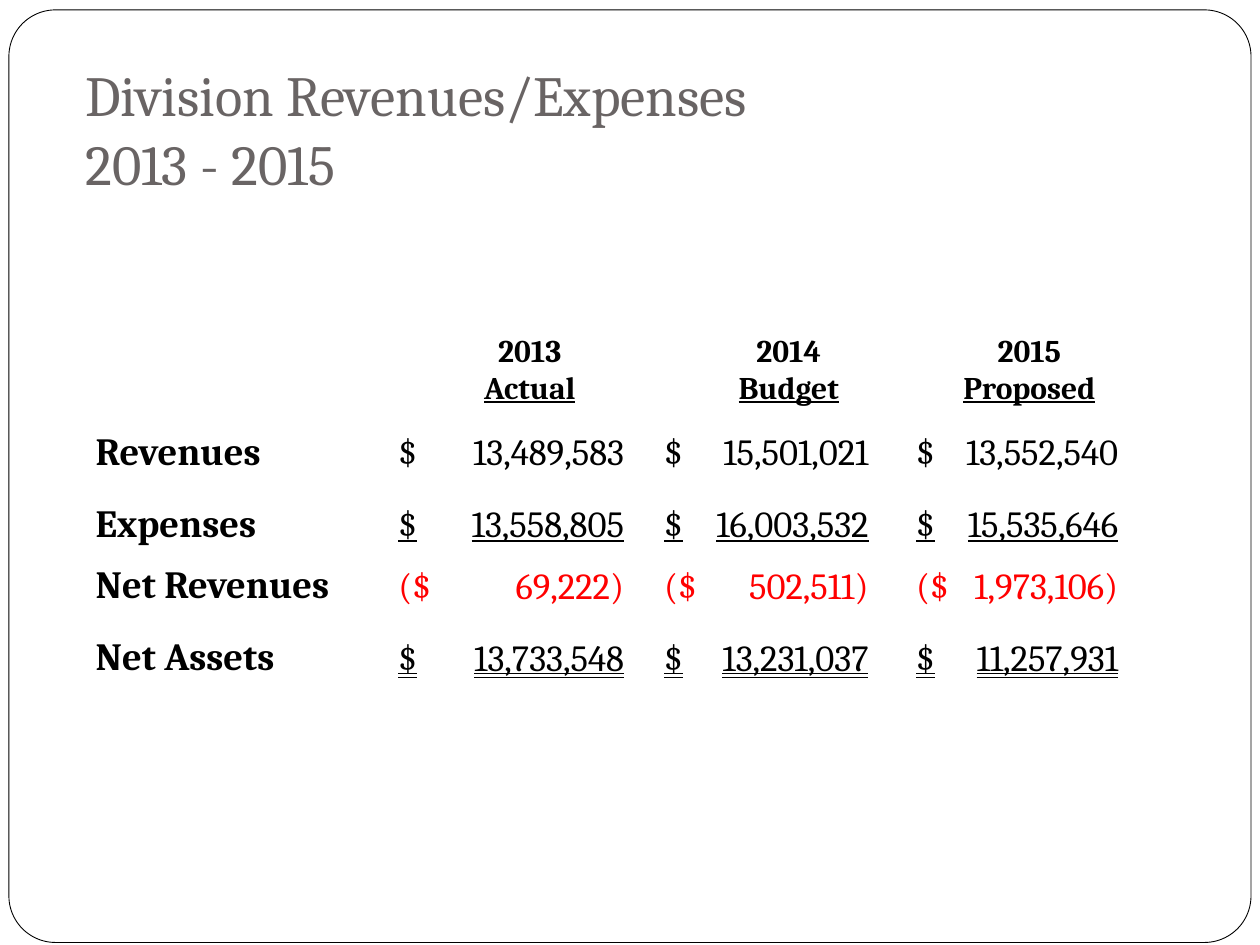
from dataclasses import dataclass

from lxml import etree
from pptx import Presentation
from pptx.dml.color import RGBColor
from pptx.enum.shapes import MSO_SHAPE
from pptx.enum.text import MSO_ANCHOR, MSO_UNDERLINE, PP_ALIGN
from pptx.oxml.ns import qn
from pptx.util import Cm, Pt

BOTTOM = MSO_ANCHOR.BOTTOM
CENTER, LEFT = PP_ALIGN.CENTER, PP_ALIGN.LEFT
SINGLE = MSO_UNDERLINE.SINGLE_LINE
DOUBLE = MSO_UNDERLINE.DOUBLE_LINE


@dataclass(frozen=True)
class Theme:
    font: str = "Cambria"
    paper: RGBColor = RGBColor(0xFF, 0xFF, 0xFF)
    ink: RGBColor = RGBColor(0, 0, 0)
    title: RGBColor = RGBColor(0x69, 0x64, 0x64)
    loss: RGBColor = RGBColor(0xFF, 0, 0)
    title_size: Pt = Pt(32.4)
    head_size: Pt = Pt(18)
    label_size: Pt = Pt(22)
    amount_size: Pt = Pt(21)


theme = Theme()


def style(p, size, color=theme.ink, bold=False, underline=None, align=LEFT):
    p.alignment = align
    p.font.name = theme.font
    p.font.size = size
    p.font.color.rgb = color
    p.font.bold = bold
    p.font.underline = underline


def add_right_tab(p, position):
    """Line up the text after a tab with its right edge at position."""
    tabs = etree.Element(qn("a:tabLst"))
    etree.SubElement(tabs, qn("a:tab"), pos=str(int(position)), algn="r")
    p.font  # the tab list has to precede the default run properties
    p._p.pPr.find(qn("a:defRPr")).addprevious(tabs)


prs = Presentation()
prs.slide_width, prs.slide_height = Cm(25.4), Cm(19.05)
s = prs.slides.add_slide(prs.slide_layouts[6])

# Frame
frame = s.shapes.add_shape(MSO_SHAPE.ROUNDED_RECTANGLE,
                           Cm(0.18), Cm(0.2), Cm(25.04), Cm(18.8))
frame.adjustments[0] = 0.05
frame.shadow.inherit = False
frame.fill.solid()
frame.fill.fore_color.rgb = theme.paper
frame.line.color.rgb = theme.ink
frame.line.width = Pt(0.5)

# Title
title = s.shapes.add_textbox(Cm(1.47), Cm(1.57), Cm(19.91), Cm(2.64))
tf = title.text_frame
tf.word_wrap = True
tf.vertical_anchor = BOTTOM
tf.margin_bottom = Cm(0.25)
p = tf.paragraphs[0]
p.text = "Division Revenues/Expenses\v2013 - 2015"
style(p, theme.title_size, theme.title)

# Table
headings = [("2013", "Actual"), ("2014", "Budget"), ("2015", "Proposed")]
rows = [
    ("Revenues", theme.ink, None,
     ["$\t13,489,583", "$\t15,501,021", "$\t13,552,540"]),
    ("Expenses", theme.ink, SINGLE,
     ["$\t13,558,805", "$\t16,003,532", "$\t15,535,646"]),
    ("Net Revenues", theme.loss, None,
     ["($\t69,222)", "($\t502,511)", "($\t1,973,106)"]),
    ("Net Assets", theme.ink, DOUBLE,
     ["$\t13,733,548", "$\t13,231,037", "$\t11,257,931"]),
]
col_widths = [Cm(6.1), Cm(5.36), Cm(5.08), Cm(4.62)]
row_heights = [Cm(1.37), Cm(1.37), Cm(1.45), Cm(1.24), Cm(1.45)]
amount_edges = [Cm(4.55), Cm(4.12), Cm(4.07)]

table = s.shapes.add_table(len(row_heights), len(col_widths), Cm(1.9), Cm(6.65),
                           sum(col_widths), sum(row_heights)).table
table.first_row = table.horz_banding = False
for column, width in zip(table.columns, col_widths):
    column.width = width
for row, height in zip(table.rows, row_heights):
    row.height = height
for cell in table.iter_cells():
    cell.fill.background()
    cell.vertical_anchor = BOTTOM
    cell.margin_left = cell.margin_right = cell.margin_top = Cm(0.03)
    cell.margin_bottom = 0

for c, (year, kind) in enumerate(headings, start=1):
    tf = table.cell(0, c).text_frame
    tf.text = f"{year}\n{kind}"
    for p, underline in zip(tf.paragraphs, (None, SINGLE)):
        style(p, theme.head_size, bold=True, underline=underline, align=CENTER)

for r, (label, color, underline, amounts) in enumerate(rows, start=1):
    p = table.cell(r, 0).text_frame.paragraphs[0]
    p.text = label
    style(p, theme.label_size, bold=True)
    for c, (amount, edge) in enumerate(zip(amounts, amount_edges), start=1):
        p = table.cell(r, c).text_frame.paragraphs[0]
        p.text = amount
        style(p, theme.amount_size, color, underline=underline)
        add_right_tab(p, edge)

prs.save("out.pptx")
